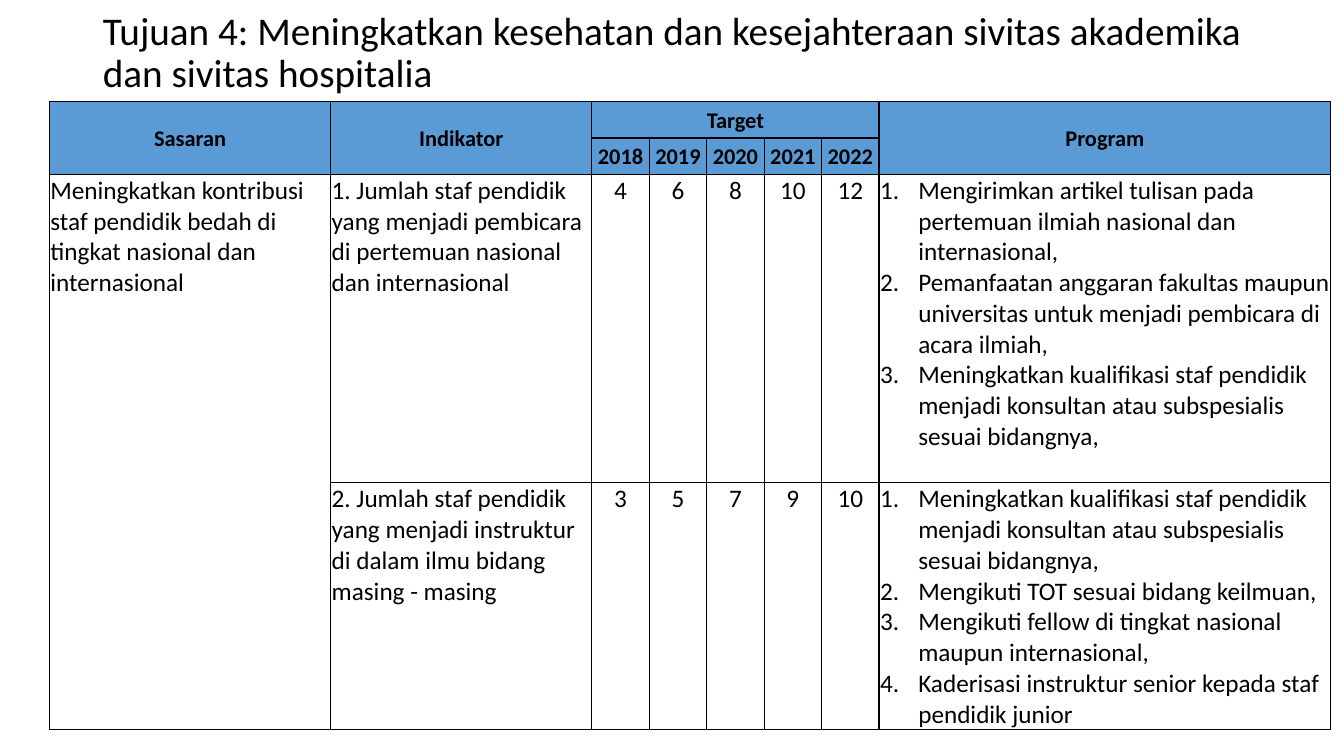
from lxml.etree import SubElement
from pptx import Presentation
from pptx.dml.color import RGBColor
from pptx.enum.text import MSO_ANCHOR, MSO_AUTO_SIZE, PP_ALIGN
from pptx.oxml.ns import qn
from pptx.util import Inches, Pt

COLORS = {"text": "000000", "header": "5B9BD5", "border": "000000"}
FONT = "Calibri"


def add_text(paragraph, text, size, bold=False, align=PP_ALIGN.LEFT):
    paragraph.alignment = align
    run = paragraph.add_run()
    run.text = text
    run.font.name = FONT
    run.font.size = Pt(size)
    run.font.bold = bold
    run.font.color.rgb = RGBColor.from_string(COLORS["text"])


def add_borders(cell):
    properties = cell._tc.get_or_add_tcPr()
    for side in ("a:lnL", "a:lnR", "a:lnT", "a:lnB"):
        line = SubElement(properties, qn(side), w=str(Pt(1)))
        fill = SubElement(line, qn("a:solidFill"))
        SubElement(fill, qn("a:srgbClr"), val=COLORS["border"])


presentation = Presentation()
presentation.slide_width = Inches(13.33)
presentation.slide_height = Inches(7.5)
slide = presentation.slides.add_slide(presentation.slide_layouts[5])

title = slide.shapes.title
title.left, title.top = Inches(0.92), Inches(0.18)
title.width, title.height = Inches(11.5), Inches(0.71)
title_frame = title.text_frame
title_frame.word_wrap = True
title_frame.auto_size = MSO_AUTO_SIZE.NONE
title_frame.vertical_anchor = MSO_ANCHOR.MIDDLE
title_frame.paragraphs[0].line_spacing = 0.9
add_text(
    title_frame.paragraphs[0],
    "Tujuan 4: Meningkatkan kesehatan dan kesejahteraan sivitas akademika dan sivitas hospitalia",
    28,
)

column_widths = [2.79, 2.59] + [0.57] * 5 + [4.48]
row_heights = [0.36, 0.36, 3.06, 2.45]
table = slide.shapes.add_table(
    len(row_heights), len(column_widths), Inches(0.49), Inches(1.01),
    Inches(sum(column_widths)), Inches(sum(row_heights)),
).table
table.first_row = False
table.horz_banding = False
for column, width in zip(table.columns, column_widths):
    column.width = Inches(width)
for row, height in zip(table.rows, row_heights):
    row.height = Inches(height)

program_column = len(column_widths) - 1
rows = [
    ["Sasaran", "Indikator", "Target", "", "", "", "", "Program"],
    ["", "", "2018", "2019", "2020", "2021", "2022", ""],
    [
        "Meningkatkan kontribusi staf pendidik bedah di tingkat nasional dan internasional",
        "1. Jumlah staf pendidik yang menjadi pembicara di pertemuan nasional dan internasional",
        "4", "6", "8", "10", "12",
        [
            "Mengirimkan artikel tulisan pada pertemuan ilmiah nasional dan internasional,",
            "Pemanfaatan anggaran fakultas maupun universitas untuk menjadi pembicara di acara ilmiah,",
            "Meningkatkan kualifikasi staf pendidik menjadi konsultan atau subspesialis sesuai bidangnya,",
        ],
    ],
    [
        "",
        "2. Jumlah staf pendidik yang menjadi instruktur di dalam ilmu bidang masing - masing",
        "3", "5", "7", "9", "10",
        [
            "Meningkatkan kualifikasi staf pendidik menjadi konsultan atau subspesialis sesuai bidangnya,",
            "Mengikuti TOT sesuai bidang keilmuan,",
            "Mengikuti fellow di tingkat nasional maupun internasional,",
            "Kaderisasi instruktur senior kepada staf pendidik junior",
        ],
    ],
]

for row_index, row in enumerate(rows):
    is_header = row_index < 2
    for column_index, content in enumerate(row):
        cell = table.cell(row_index, column_index)
        cell.margin_left = cell.margin_right = cell.margin_top = Inches(0.01)
        cell.margin_bottom = 0
        cell.vertical_anchor = MSO_ANCHOR.MIDDLE if is_header else MSO_ANCHOR.TOP
        add_borders(cell)
        if is_header:
            cell.fill.solid()
            cell.fill.fore_color.rgb = RGBColor.from_string(COLORS["header"])
        else:
            cell.fill.background()

        if isinstance(content, list):
            for item_index, item in enumerate(content):
                frame = cell.text_frame
                paragraph = frame.add_paragraph() if item_index else frame.paragraphs[0]
                properties = paragraph._p.get_or_add_pPr()
                properties.set("marL", str(Inches(0.38)))
                properties.set("indent", str(Inches(-0.38)))
                SubElement(properties, qn("a:buFont"), typeface=FONT)
                SubElement(properties, qn("a:buAutoNum"), type="arabicPeriod")
                add_text(paragraph, item, 18)
        elif content:
            centred = is_header or 2 <= column_index < program_column
            add_text(
                cell.text_frame.paragraphs[0], content, 16 if is_header else 18, is_header,
                PP_ALIGN.CENTER if centred else PP_ALIGN.LEFT,
            )

merges = [
    ((0, 0), (1, 0)),
    ((0, 1), (1, 1)),
    ((0, 2), (0, program_column - 1)),
    ((0, program_column), (1, program_column)),
    ((2, 0), (3, 0)),
]
for first, last in merges:
    table.cell(*first).merge(table.cell(*last))

presentation.save("out.pptx")
